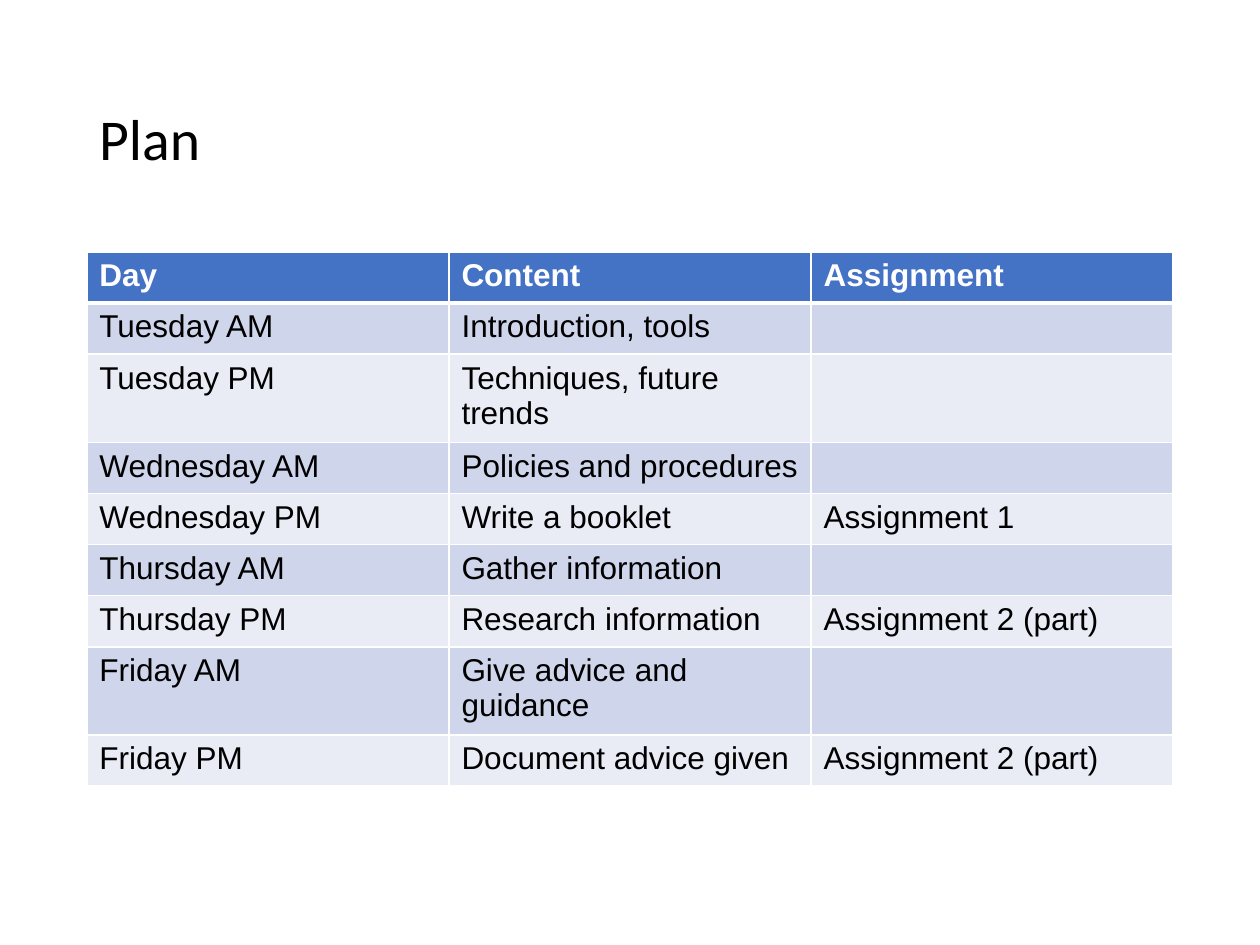
from dataclasses import dataclass

import lxml.etree
import pptx
import pptx.dml.color
import pptx.enum.text
import pptx.oxml.ns
import pptx.util

Cm = pptx.util.Cm
Pt = pptx.util.Pt

LEFT = 1.75
COLUMN_WIDTH = 7.3
ROW_HEIGHT = 1.03
HEADER_FILL = "4472C4"
BAND_FILLS = ("CFD5EA", "E9EBF5")
WHITE = "FFFFFF"
BLACK = "000000"


@dataclass(frozen=True)
class Session:
    day: str
    content: str
    assignment: str = ""


@dataclass(frozen=True)
class RowStyle:
    fill: str
    color: str = BLACK
    bold: bool = False
    top: float = 1
    bottom: float = 1


HEADER = Session("Day", "Content", "Assignment")
SESSIONS = [
    Session("Tuesday AM", "Introduction, tools"),
    Session("Tuesday PM", "Techniques, future trends"),
    Session("Wednesday AM", "Policies and procedures"),
    Session("Wednesday PM", "Write a booklet", "Assignment 1"),
    Session("Thursday AM", "Gather information"),
    Session("Thursday PM", "Research information", "Assignment 2 (part)"),
    Session("Friday AM", "Give advice and guidance"),
    Session("Friday PM", "Document advice given", "Assignment 2 (part)"),
]


def rgb(value: str) -> pptx.dml.color.RGBColor:
    return pptx.dml.color.RGBColor.from_string(value)


def add_span(para, text: str, font: str, size: float, color: str, bold: bool = False) -> None:
    span = para.add_run()
    span.text = text
    span.font.name = font
    span.font.size = Pt(size)
    span.font.bold = bold
    span.font.color.rgb = rgb(color)


def add_border(cell, side: str, width: float) -> None:
    qn = pptx.oxml.ns.qn
    properties = cell._tc.get_or_add_tcPr()
    line = lxml.etree.SubElement(properties, qn(f"a:ln{side}"), w=str(Pt(width)))
    fill = lxml.etree.SubElement(line, qn("a:solidFill"))
    lxml.etree.SubElement(fill, qn("a:srgbClr"), val=WHITE)


def fill_cell(cell, text: str, style: RowStyle) -> None:
    for side, width in (("L", 1), ("R", 1), ("T", style.top), ("B", style.bottom)):
        add_border(cell, side, width)
    cell.fill.solid()
    cell.fill.fore_color.rgb = rgb(style.fill)
    if text:
        add_span(cell.text_frame.paragraphs[0], text, "Arial", 18, style.color, style.bold)


def row_style(index: int) -> RowStyle:
    if index == 0:
        return RowStyle(HEADER_FILL, WHITE, bold=True, bottom=3)
    return RowStyle(BAND_FILLS[(index - 1) % 2], top=3 if index == 1 else 1)


def add_title(page, text: str) -> None:
    box = page.shapes.add_textbox(Cm(LEFT), Cm(1.01), Cm(3 * COLUMN_WIDTH), Cm(3.68))
    frame = box.text_frame
    frame.word_wrap = True
    frame.vertical_anchor = pptx.enum.text.MSO_ANCHOR.MIDDLE
    para = frame.paragraphs[0]
    para.line_spacing = 0.9
    add_span(para, text, "Calibri", 33, BLACK)


def add_plan(page, sessions: list[Session]) -> None:
    rows = [HEADER, *sessions]
    table = page.shapes.add_table(
        len(rows), 3, Cm(LEFT), Cm(5.08), Cm(3 * COLUMN_WIDTH), Cm(len(rows) * ROW_HEIGHT)
    ).table
    for column in table.columns:
        column.width = Cm(COLUMN_WIDTH)
    for index, session in enumerate(rows):
        table.rows[index].height = Cm(ROW_HEIGHT)
        texts = (session.day, session.content, session.assignment)
        for cell, text in zip(table.rows[index].cells, texts):
            fill_cell(cell, text, row_style(index))


def main() -> None:
    deck = pptx.Presentation()
    deck.slide_width = Cm(25.4)
    deck.slide_height = Cm(19.05)
    page = deck.slides.add_slide(deck.slide_layouts[6])
    add_title(page, "Plan")
    add_plan(page, SESSIONS)
    deck.save("out.pptx")


if __name__ == "__main__":
    main()
